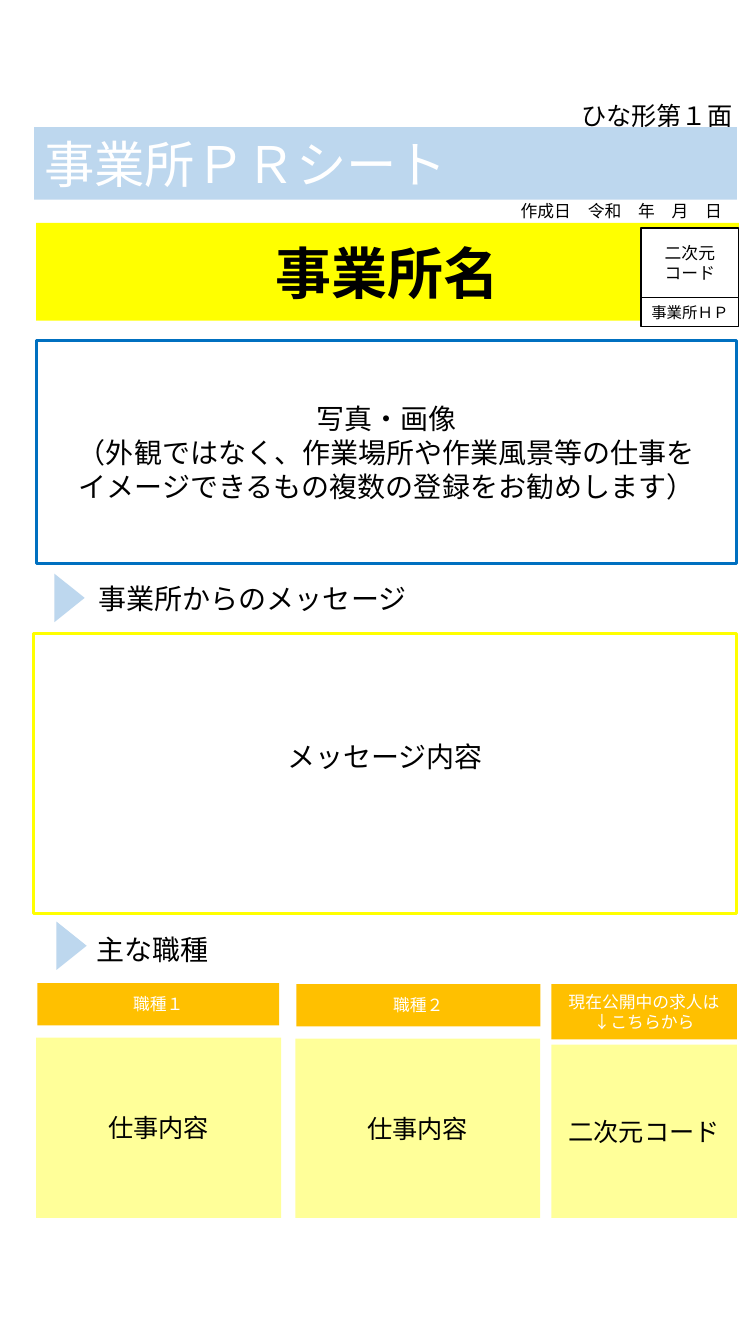
from dataclasses import dataclass
from typing import Optional

import lxml.etree
import pptx
import pptx.dml.color
import pptx.enum.shapes
import pptx.enum.text
import pptx.oxml.ns
import pptx.util

CELL = 0.1
COLUMNS, ROWS = 75, 133.3
JAPANESE_FONT = "Noto Sans CJK JP"
BLACK, WHITE = "000000", "FFFFFF"
PALE_BLUE, BLUE = "BDD7EE", "0070C0"
YELLOW, PALE_YELLOW, ORANGE = "FFFF00", "FFFF99", "FFC000"
LEFT = pptx.enum.text.PP_ALIGN.LEFT
CENTER = pptx.enum.text.PP_ALIGN.CENTER
RECTANGLE = pptx.enum.shapes.MSO_SHAPE.RECTANGLE
TRIANGLE = pptx.enum.shapes.MSO_SHAPE.ISOSCELES_TRIANGLE


@dataclass(frozen=True)
class Area:
    column: float
    row: float
    columns: float
    rows: float


@dataclass(frozen=True)
class Label:
    lines: tuple[str, ...]
    size: float
    color: str = BLACK
    bold: bool = False
    align: int = CENTER
    font: str = JAPANESE_FONT
    bottom_rows: float = 0.5


@dataclass(frozen=True)
class Panel:
    area: Area
    label: Label
    fill: Optional[str] = None
    line: Optional[str] = None
    line_width: float = 1


@dataclass(frozen=True)
class Caption:
    area: Area
    label: Label


@dataclass(frozen=True)
class Job:
    header: Area
    content: Area
    title: tuple[str, ...]
    description: str


def length(cells: float) -> int:
    return pptx.util.Inches(cells * CELL)


def frame(area: Area) -> tuple[int, ...]:
    return tuple(length(cells) for cells in (area.column, area.row, area.columns, area.rows))


def rgb(color: str) -> pptx.dml.color.RGBColor:
    return pptx.dml.color.RGBColor.from_string(color)


def write(shape, label: Label) -> None:
    text_frame = shape.text_frame
    text_frame.word_wrap = True
    text_frame.vertical_anchor = pptx.enum.text.MSO_ANCHOR.MIDDLE
    text_frame.margin_bottom = length(label.bottom_rows)
    for index, line in enumerate(label.lines):
        paragraph = text_frame.add_paragraph() if index else text_frame.paragraphs[0]
        paragraph.alignment = label.align
        run = paragraph.add_run()
        run.text = line
        run.font.size = pptx.util.Pt(label.size)
        run.font.bold = label.bold
        run.font.color.rgb = rgb(label.color)
        run.font.name = label.font
        properties = run.font._element
        east_asian = lxml.etree.SubElement(properties, pptx.oxml.ns.qn("a:ea"))
        east_asian.set("typeface", JAPANESE_FONT)


def draw_shape(slide, kind: int, area: Area, fill: Optional[str],
               line: Optional[str] = None, line_width: float = 1):
    shape = slide.shapes.add_shape(kind, *frame(area))
    shape.shadow.inherit = False
    if fill:
        shape.fill.solid()
        shape.fill.fore_color.rgb = rgb(fill)
    else:
        shape.fill.background()
    if line:
        shape.line.color.rgb = rgb(line)
        shape.line.width = pptx.util.Pt(line_width)
    else:
        shape.line.fill.background()
    return shape


def draw_panel(slide, panel: Panel) -> None:
    shape = draw_shape(slide, RECTANGLE, panel.area, panel.fill, panel.line, panel.line_width)
    write(shape, panel.label)


def draw_caption(slide, caption: Caption) -> None:
    write(slide.shapes.add_textbox(*frame(caption.area)), caption.label)


def draw_job(slide, job: Job) -> None:
    draw_panel(slide, Panel(job.header, Label(job.title, 12, WHITE), ORANGE))
    draw_panel(slide, Panel(job.content, Label((job.description,), 18), PALE_YELLOW))


def draw_marker(slide, area: Area) -> None:
    draw_shape(slide, TRIANGLE, area, PALE_BLUE).rotation = 90


PANELS = (
    Panel(Area(3.4, 12.6, 69.7, 7.2),
          Label(("事業所ＰＲシート",), 36, WHITE, align=LEFT), PALE_BLUE),
    Panel(Area(3.6, 22.1, 69.7, 9.7), Label(("事業所名",), 40, bold=True), YELLOW),
    Panel(Area(63.6, 22.6, 9.7, 6.9), Label(("二次元コード",), 12), WHITE, BLACK),
    Panel(Area(63.6, 29.5, 9.7, 2.9), Label(("事業所ＨＰ",), 11), WHITE, BLACK),
    Panel(Area(3.6, 33.8, 69.5, 22.1),
          Label(("写真・画像", "（外観ではなく、作業場所や作業風景等の仕事を",
                 "イメージできるもの複数の登録をお勧めします）"), 20),
          line=BLUE, line_width=2.25),
    Panel(Area(3.3, 62.8, 69.8, 27.8),
          Label(("メッセージ内容",), 20, bottom_rows=3.8), line=YELLOW, line_width=2.25),
)
CAPTIONS = (
    Caption(Area(50.2, 18.8, 22.9, 4.3),
            Label(("作成日　令和　年　月　日",), 12, font="Calibri")),
    Caption(Area(8.8, 56.9, 45.9, 4.8), Label(("事業所からのメッセージ",), 20, align=LEFT)),
    Caption(Area(8.6, 91.8, 27, 4.8), Label(("主な職種",), 20, align=LEFT)),
    Caption(Area(54.7, 9.7, 20.9, 3.4), Label(("ひな形第１面",), 18, font="Calibri")),
)
JOBS = (
    Job(Area(3.7, 97.5, 24, 4.2), Area(3.6, 102.9, 24.3, 17.9), ("職種１",), "仕事内容"),
    Job(Area(29.4, 97.6, 24.2, 4.2), Area(29.3, 103, 24.3, 17.8), ("職種２",), "仕事内容"),
    Job(Area(54.7, 97.6, 18.4, 5.5), Area(54.7, 103.6, 18.4, 17.2),
        ("現在公開中の求人は", "↓こちらから"), "二次元コード"),
)
MARKERS = (Area(4.5, 57.8, 4.8, 3), Area(4.7, 92.3, 4.8, 3))


def main() -> None:
    presentation = pptx.Presentation()
    presentation.slide_width = length(COLUMNS)
    presentation.slide_height = length(ROWS)
    slide = presentation.slides.add_slide(presentation.slide_layouts[6])
    for panel in PANELS:
        draw_panel(slide, panel)
    for job in JOBS:
        draw_job(slide, job)
    for marker in MARKERS:
        draw_marker(slide, marker)
    for caption in CAPTIONS:
        draw_caption(slide, caption)
    presentation.save("out.pptx")


if __name__ == "__main__":
    main()
